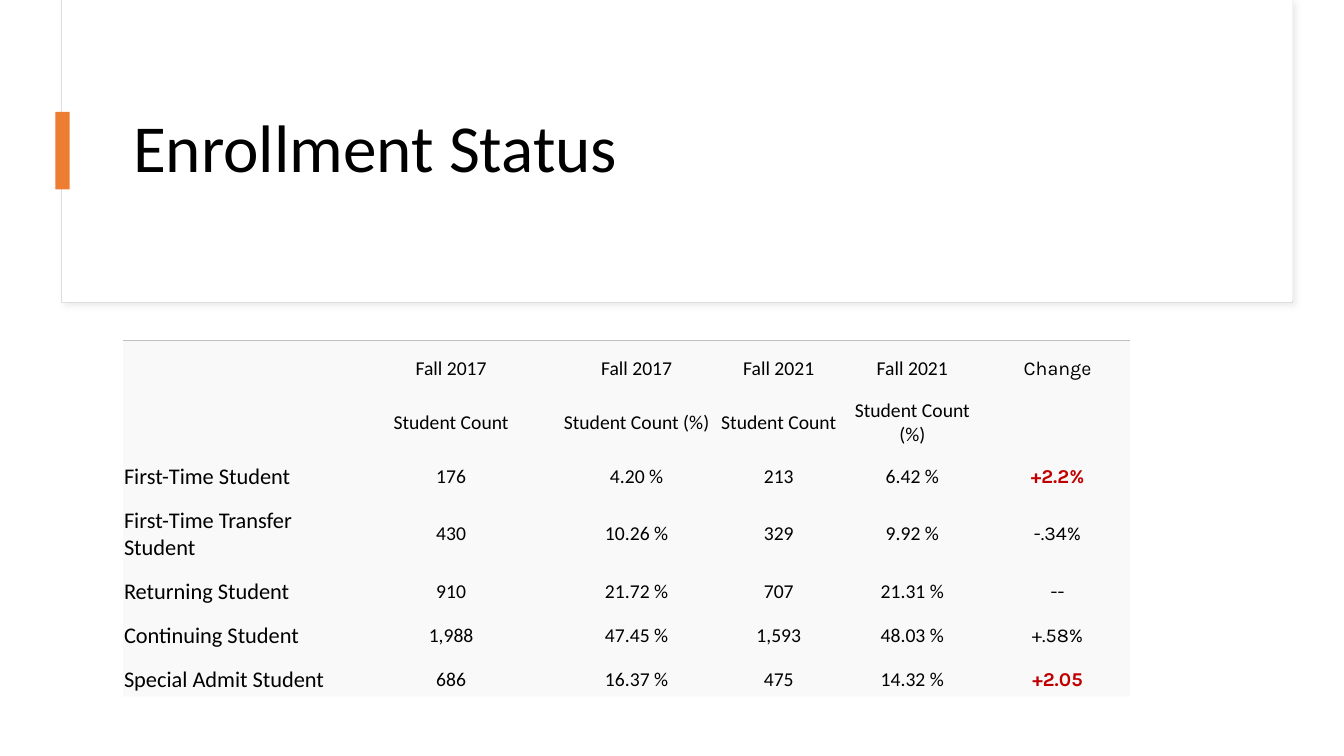
from lxml.etree import SubElement
from pptx import Presentation
from pptx.dml.color import RGBColor
from pptx.enum.shapes import MSO_SHAPE
from pptx.enum.text import MSO_ANCHOR, PP_ALIGN
from pptx.oxml import parse_xml
from pptx.oxml.ns import nsdecls, qn
from pptx.util import Inches, Pt

TITLE = "Enrollment Status"
ROWS = [
    ("", "Fall 2017", "Fall 2017", "Fall 2021", "Fall 2021", "Change"),
    ("", "Student Count", "Student Count (%)", "Student Count", "Student Count (%)", ""),
    ("First-Time Student", "176", "4.20 %", "213", "6.42 %", "+2.2%"),
    ("First-Time Transfer Student", "430", "10.26 %", "329", "9.92 %", "-.34%"),
    ("Returning Student", "910", "21.72 %", "707", "21.31 %", "--"),
    ("Continuing Student", "1,988", "47.45 %", "1,593", "48.03 %", "+.58%"),
    ("Special Admit Student", "686", "16.37 %", "475", "14.32 %", "+2.05"),
]
HIGHLIGHTS = {"+2.2%", "+2.05"}
COLUMN_WIDTHS = [2.22, 2.07, 1.61, 1.21, 1.44, 1.44]
ROW_HEIGHTS = [0.44, 0.63, 0.44, 0.7, 0.44, 0.44, 0.44]
NO_STYLE = "{2D5ABB26-0587-4C30-8999-92F81FD0307C}"
BLACK, WHITE, RED, ORANGE = "000000", "FFFFFF", "C00000", "ED7D31"


def color(value):
    return RGBColor.from_string(value)


def set_font(font, name, size, value=BLACK, bold=False):
    font.name, font.size, font.bold = name, Pt(size), bold
    font.color.rgb = color(value)


def add_panel(page, left, top, width, height, fill):
    panel = page.shapes.add_shape(
        MSO_SHAPE.RECTANGLE, Inches(left), Inches(top), Inches(width), Inches(height))
    panel.shadow.inherit = False
    panel.fill.solid()
    panel.fill.fore_color.rgb = color(fill)
    panel.line.fill.background()
    return panel


def add_frame(page):
    frame = add_panel(page, 0.61, 0, 12.21, 3, WHITE)
    frame.line.color.rgb = color("DEDEDE")
    frame.line.width = Pt(0.75)
    effects = frame._element.spPr.find(qn("a:effectLst"))
    effects.append(parse_xml(
        f'<a:outerShdw {nsdecls("a")} blurRad="{Pt(4)}" dist="{Pt(3)}" dir="2700000"'
        ' algn="tl" rotWithShape="0"><a:srgbClr val="D9D9D9"><a:alpha val="50000"/>'
        '</a:srgbClr></a:outerShdw>'))
    add_panel(page, 0.62, 0, 12.2, 2.98, WHITE)


def place_title(page):
    title = page.shapes.title
    title.left, title.top = Inches(1.22), Inches(0.38)
    title.width, title.height = Inches(11.12), Inches(2.24)
    title.text_frame.text = TITLE
    title.text_frame.vertical_anchor = MSO_ANCHOR.MIDDLE
    para = title.text_frame.paragraphs[0]
    para.alignment = PP_ALIGN.LEFT
    para.line_spacing = 0.9
    set_font(para.font, "Calibri", 48)
    page.shapes._spTree.append(title._element)  # in front of the frame


def shade(cell, top_border):
    cell.fill.solid()
    cell.fill.fore_color.rgb = color("F2F2F2")
    properties = cell._tc.tcPr
    SubElement(properties.find(".//" + qn("a:srgbClr")), qn("a:alpha"), val="45000")
    if top_border:
        properties.insert(0, parse_xml(
            f'<a:lnT {nsdecls("a")} w="{Pt(1)}"><a:solidFill>'
            '<a:srgbClr val="BFBFBF"/></a:solidFill></a:lnT>'))


def write_cell(cell, text, column):
    cell.text = text
    cell.vertical_anchor = MSO_ANCHOR.MIDDLE
    cell.margin_left = cell.margin_right = Inches(0.01)
    cell.margin_top, cell.margin_bottom = Inches(0.12), 0
    para = cell.text_frame.paragraphs[0]
    para.alignment = PP_ALIGN.CENTER if column else PP_ALIGN.LEFT
    is_change = column == len(COLUMN_WIDTHS) - 1
    marked = text in HIGHLIGHTS
    set_font(para.font, "Karla" if is_change else "Calibri", 14 if column else 16,
             RED if marked else BLACK, marked)


def add_enrollment_table(page):
    holder = page.shapes.add_table(
        len(ROWS), len(COLUMN_WIDTHS), Inches(1.22), Inches(3.38),
        Inches(sum(COLUMN_WIDTHS)), Inches(sum(ROW_HEIGHTS)))
    table = holder.table
    table.first_row = table.horz_banding = False
    table._tbl.tblPr.find(qn("a:tableStyleId")).text = NO_STYLE
    for column, width in zip(table.columns, COLUMN_WIDTHS):
        column.width = Inches(width)
    for row, height in zip(table.rows, ROW_HEIGHTS):
        row.height = Inches(height)
    for r, texts in enumerate(ROWS):
        for c, text in enumerate(texts):
            write_cell(table.cell(r, c), text, c)
            shade(table.cell(r, c), top_border=r == 0)


def main():
    deck = Presentation()
    deck.slide_width, deck.slide_height = Inches(13.33), Inches(7.5)
    page = deck.slides.add_slide(deck.slide_layouts[5])
    add_frame(page)
    place_title(page)
    add_panel(page, 0.55, 1.11, 0.14, 0.77, ORANGE)
    add_enrollment_table(page)
    deck.save("out.pptx")


if __name__ == "__main__":
    main()
